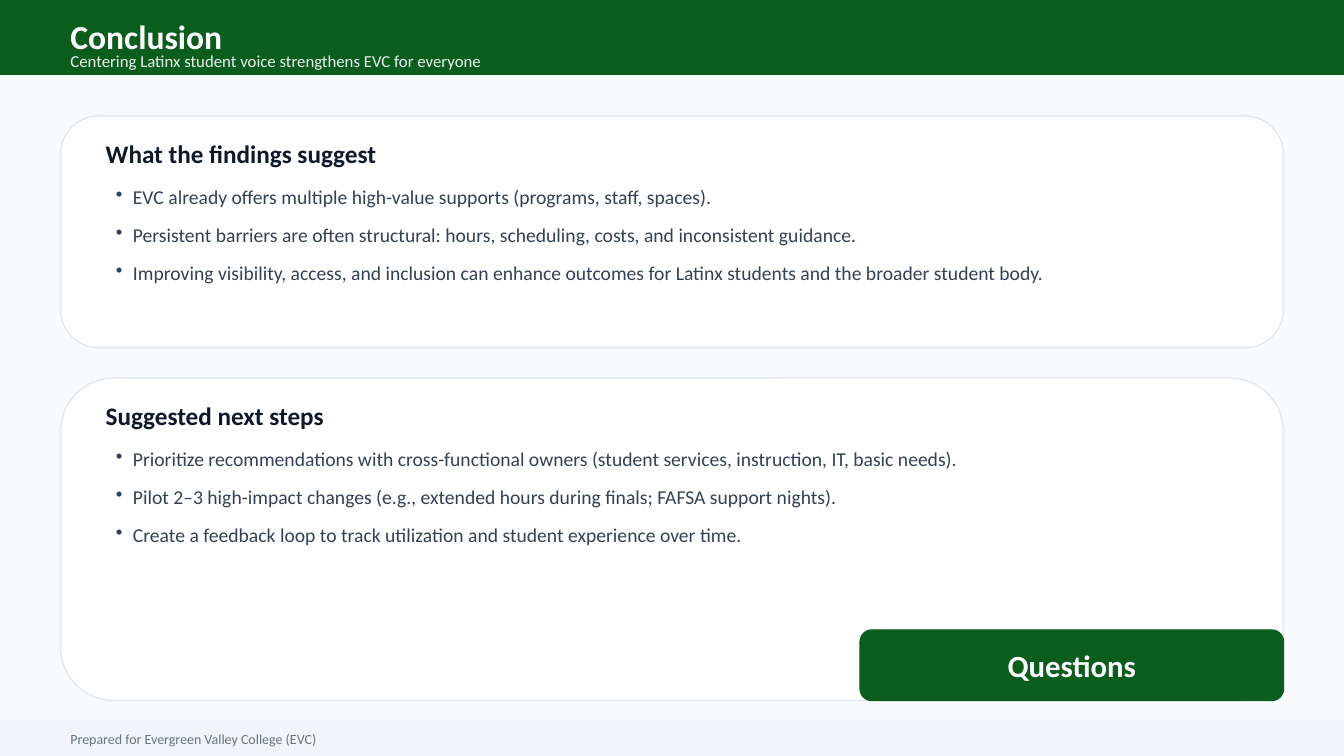
import pptx
import pptx.util
import pptx.dml.color
import pptx.enum.shapes
import pptx.enum.text
import pptx.oxml.ns
from lxml import etree

Pt = pptx.util.Pt
RGBColor = pptx.dml.color.RGBColor
SHAPES = pptx.enum.shapes.MSO_SHAPE
ANCHOR = pptx.enum.text.MSO_ANCHOR
ALIGN = pptx.enum.text.PP_ALIGN

# Content
TITLE = "Conclusion"
SUBTITLE = "Centering Latinx student voice strengthens EVC for everyone"
FOOTER = "Prepared for Evergreen Valley College (EVC)"
BUTTON = "Questions"
# Each card: heading, top, height, bullet box height, bullets
CARDS = [
    ("What the findings suggest", 82.8, 165.6, 111.6, [
        "EVC already offers multiple high-value supports (programs, staff, spaces).",
        "Persistent barriers are often structural: hours, scheduling, costs, and inconsistent guidance.",
        "Improving visibility, access, and inclusion can enhance outcomes for Latinx students "
        "and the broader student body.",
    ]),
    ("Suggested next steps", 270, 230.4, 126, [
        "Prioritize recommendations with cross-functional owners "
        "(student services, instruction, IT, basic needs).",
        "Pilot 2–3 high-impact changes (e.g., extended hours during finals; FAFSA support nights).",
        "Create a feedback loop to track utilization and student experience over time.",
    ]),
]

# Colours
GREEN = RGBColor(0x0B, 0x5D, 0x1E)
PALE_GREEN = RGBColor(0xEA, 0xF2, 0xEC)
WHITE = RGBColor(0xFF, 0xFF, 0xFF)
BODY_FILL = RGBColor(0xF8, 0xFA, 0xFC)
FOOTER_FILL = RGBColor(0xF1, 0xF5, 0xF9)
BORDER = RGBColor(0xE2, 0xE8, 0xF0)
HEADING_INK = RGBColor(0x0F, 0x17, 0x2A)
TEXT_INK = RGBColor(0x33, 0x41, 0x55)
FOOTER_INK = RGBColor(0x64, 0x74, 0x8B)

# Layout in points
WIDTH, HEIGHT = 960, 540
HEADER_HEIGHT, FOOTER_HEIGHT = 54, 25.2
MARGIN = 43.2
CONTENT_WIDTH = WIDTH - 2 * MARGIN
HEADING_INDENT, BULLET_INDENT = 25.2, 32.4
HANGING = 12.24
BUTTON_WIDTH, BUTTON_HEIGHT = 302.4, 50.4

presentation = pptx.Presentation()
presentation.slide_width, presentation.slide_height = Pt(WIDTH), Pt(HEIGHT)
slide = presentation.slides.add_slide(presentation.slide_layouts[6])


def add_panel(kind, left, top, width, height, fill, line):
    shape = slide.shapes.add_shape(kind, Pt(left), Pt(top), Pt(width), Pt(height))
    shape.shadow.inherit = False
    shape.fill.solid()
    shape.fill.fore_color.rgb = fill
    shape.line.color.rgb = line
    shape.line.width = Pt(1)


def add_text(lines, left, top, width, height, size, color, bold=False,
             anchor=ANCHOR.MIDDLE, align=ALIGN.LEFT, bulleted=False):
    box = slide.shapes.add_textbox(Pt(left), Pt(top), Pt(width), Pt(height))
    frame = box.text_frame
    frame.word_wrap = True
    frame.vertical_anchor = anchor
    frame.text = "\n".join(lines)
    for paragraph in frame.paragraphs:
        paragraph.alignment = align
        if bulleted:
            add_bullet(paragraph)
        font = paragraph.runs[0].font
        font.name, font.size, font.bold = "Calibri", Pt(size), bold
        font.color.rgb = color


def add_bullet(paragraph):
    paragraph.line_spacing = 1.15
    paragraph.space_after = Pt(8)
    properties = paragraph._p.get_or_add_pPr()
    properties.set("marL", str(Pt(HANGING)))
    properties.set("indent", str(-Pt(HANGING)))
    bullet = etree.SubElement(properties, pptx.oxml.ns.qn("a:buChar"))
    bullet.set("char", "•")


# Header and body background
add_panel(SHAPES.RECTANGLE, 0, 0, WIDTH, HEADER_HEIGHT, GREEN, GREEN)
add_text([TITLE], MARGIN, 11.52, CONTENT_WIDTH, 28.8, 24, WHITE, bold=True)
add_text([SUBTITLE], MARGIN, 35.28, CONTENT_WIDTH, 15.84, 12, PALE_GREEN)
footer_top = HEIGHT - FOOTER_HEIGHT
add_panel(SHAPES.RECTANGLE, 0, HEADER_HEIGHT, WIDTH, footer_top - HEADER_HEIGHT,
          BODY_FILL, BODY_FILL)

# Cards
for heading, top, height, bullets_height, bullets in CARDS:
    add_panel(SHAPES.ROUNDED_RECTANGLE, MARGIN, top, CONTENT_WIDTH, height, WHITE, BORDER)
    add_text([heading], MARGIN + HEADING_INDENT, top + 14.4,
             CONTENT_WIDTH - 2 * HEADING_INDENT, 25.2, 18, HEADING_INK, bold=True)
    add_text(bullets, MARGIN + BULLET_INDENT, top + 43.2,
             CONTENT_WIDTH - 2 * BULLET_INDENT, bullets_height, 14, TEXT_INK,
             anchor=ANCHOR.TOP, bulleted=True)

# Button in the lower right corner of the last card
button_left = WIDTH - MARGIN - BUTTON_WIDTH
button_top = top + height - BUTTON_HEIGHT
add_panel(SHAPES.ROUNDED_RECTANGLE, button_left, button_top, BUTTON_WIDTH, BUTTON_HEIGHT,
          GREEN, GREEN)
add_text([BUTTON], button_left, button_top + 6.48, BUTTON_WIDTH, BUTTON_HEIGHT - 12.96,
         22, WHITE, bold=True, align=ALIGN.CENTER)

# Footer
add_panel(SHAPES.RECTANGLE, 0, footer_top, WIDTH, FOOTER_HEIGHT, FOOTER_FILL, FOOTER_FILL)
add_text([FOOTER], MARGIN, footer_top + 5.04, WIDTH / 2, 15.84, 10, FOOTER_INK)

presentation.save("out.pptx")
